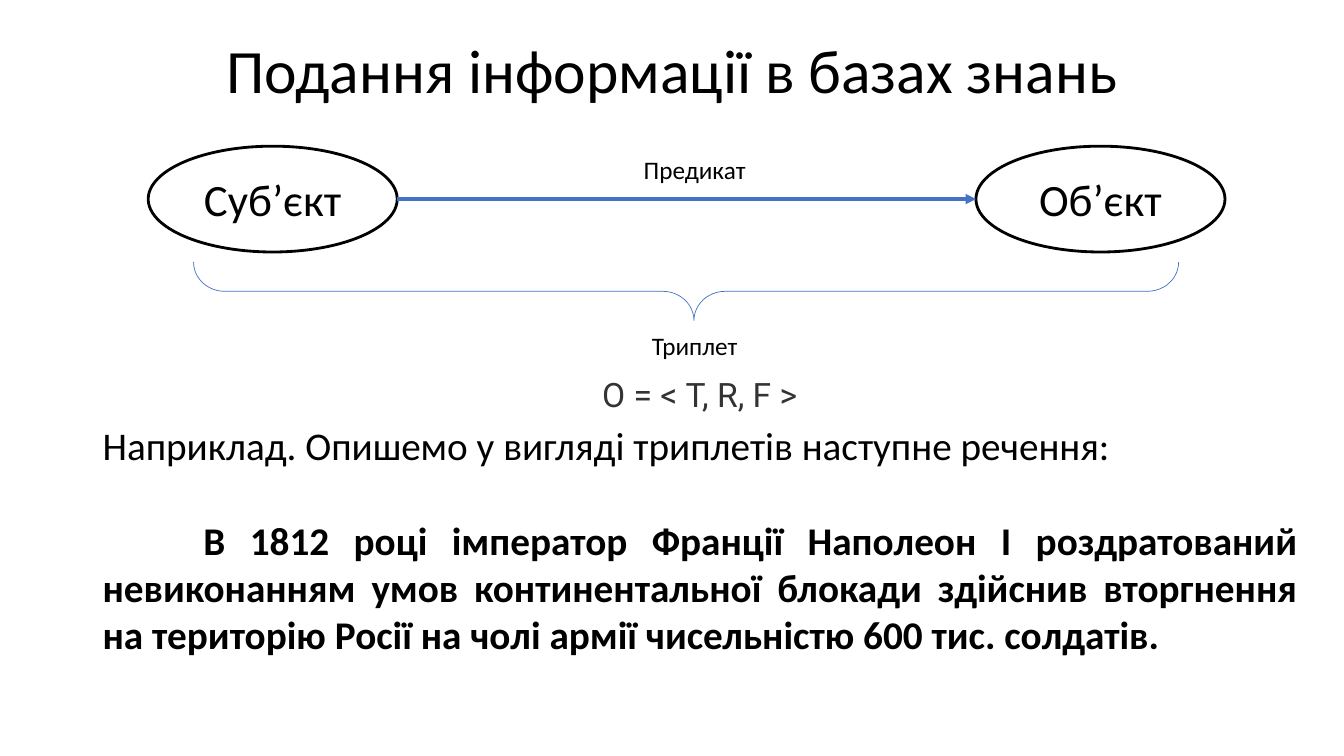
from pptx import Presentation
from pptx.dml.color import RGBColor
from pptx.enum import shapes, text
from pptx.oxml.ns import qn
from pptx.util import Inches, Pt
from lxml import etree

COLORS = {"black": "000000", "blue": "4472C4", "gray": "333333"}
TITLE = "Подання інформації в базах знань"
SUBJECT, PREDICATE, OBJECT = "Суб’єкт", "Предикат", "Об’єкт"
TRIPLET = "Триплет"
FORMULA = "О = < T, R, F >"
INTRO = "Наприклад. Опишемо у вигляді триплетів наступне речення:"
SENTENCE = (
    "В 1812 році імператор Франції Наполеон І роздратований невиконанням умов "
    "континентальної блокади здійснив вторгнення на територію Росії на чолі "
    "армії чисельністю 600 тис. солдатів."
)

NODE_W, NODE_H, NODE_TOP = 2.47, 1.05, 1.45
SUBJECT_LEFT, OBJECT_LEFT = 1.47, 9.68
LABEL_LEFT, LABEL_W, LABEL_H = 5.88, 2.02, 0.49
BRACE_LEFT, BRACE_TOP, BRACE_W, BRACE_H = 1.92, 2.6, 9.77, 0.58


def color(name):
    return RGBColor.from_string(COLORS[name])


def write(p, words, size, font="Calibri", fill="black", bold=False,
          align=text.PP_ALIGN.CENTER):
    p.alignment = align
    r = p.add_run()
    r.text = words
    r.font.size, r.font.name, r.font.bold = Pt(size), font, bold
    r.font.color.rgb = color(fill)


def add_box(slide, left, top, width, height, anchor=text.MSO_ANCHOR.MIDDLE):
    sp = slide.shapes.add_textbox(*map(Inches, (left, top, width, height)))
    tf = sp.text_frame
    tf.word_wrap = True
    tf.vertical_anchor = anchor
    return tf


def add_outline(slide, kind, box, line, width):
    """Add an unfilled preset shape without a shadow."""
    sp = slide.shapes.add_shape(kind, *map(Inches, box))
    sp.shadow.inherit = False
    sp.fill.background()
    sp.line.color.rgb = color(line)
    sp.line.width = Pt(width)
    return sp


def add_title(slide):
    title = slide.shapes.title
    title.left, title.top = Inches(0.92), Inches(0)
    title.width, title.height = Inches(11.5), Inches(1.45)
    tf = title.text_frame
    tf.vertical_anchor = text.MSO_ANCHOR.MIDDLE
    tf.paragraphs[0].line_spacing = 0.9
    write(tf.paragraphs[0], TITLE, 44)


def add_triplet(slide):
    for words, left in ((SUBJECT, SUBJECT_LEFT), (OBJECT, OBJECT_LEFT)):
        node = add_outline(slide, shapes.MSO_SHAPE.OVAL,
                           (left, NODE_TOP, NODE_W, NODE_H), "black", 2)
        node.text_frame.vertical_anchor = text.MSO_ANCHOR.MIDDLE
        write(node.text_frame.paragraphs[0], words, 32)

    middle = Inches(NODE_TOP + NODE_H / 2)
    arrow = slide.shapes.add_connector(
        shapes.MSO_CONNECTOR.STRAIGHT, Inches(SUBJECT_LEFT + NODE_W), middle,
        Inches(OBJECT_LEFT), middle)
    arrow.line.color.rgb = color("blue")
    arrow.line.width = Pt(2.5)
    etree.SubElement(arrow.line._get_or_add_ln(), qn("a:tailEnd"), type="triangle")
    etree.SubElement(arrow._element.spPr, qn("a:effectLst"))

    # A left brace turned to point down: its box is upright around the same centre.
    brace = add_outline(
        slide, shapes.MSO_SHAPE.LEFT_BRACE,
        (BRACE_LEFT + (BRACE_W - BRACE_H) / 2, BRACE_TOP + (BRACE_H - BRACE_W) / 2,
         BRACE_H, BRACE_W), "blue", 0.5)
    brace.rotation = 270
    brace.adjustments[0], brace.adjustments[1] = 0.533, 0.508

    for words, top in ((PREDICATE, 1.44), (TRIPLET, 3.18)):
        tf = add_box(slide, LABEL_LEFT, top, LABEL_W, LABEL_H)
        write(tf.paragraphs[0], words, 18)


def add_example(slide):
    tf = add_box(slide, 0.92, 4.13, 12.04, 2.46, text.MSO_ANCHOR.TOP)
    write(tf.paragraphs[0], INTRO, 28, align=text.PP_ALIGN.JUSTIFY)
    p = tf.add_paragraph()
    p.space_before = Pt(34)
    p._p.get_or_add_pPr().set("indent", str(Inches(1)))
    write(p, SENTENCE, 28, bold=True, align=text.PP_ALIGN.JUSTIFY)

    tf = add_box(slide, 5.64, 3.66, 2.6, 0.5, text.MSO_ANCHOR.TOP)
    write(tf.paragraphs[0], FORMULA, 24, font="Roboto", fill="gray")


def main():
    prs = Presentation()
    prs.slide_width, prs.slide_height = Inches(13.33), Inches(7.5)
    slide = prs.slides.add_slide(prs.slide_layouts[5])
    add_title(slide)
    add_triplet(slide)
    add_example(slide)
    prs.save("out.pptx")


if __name__ == "__main__":
    main()
